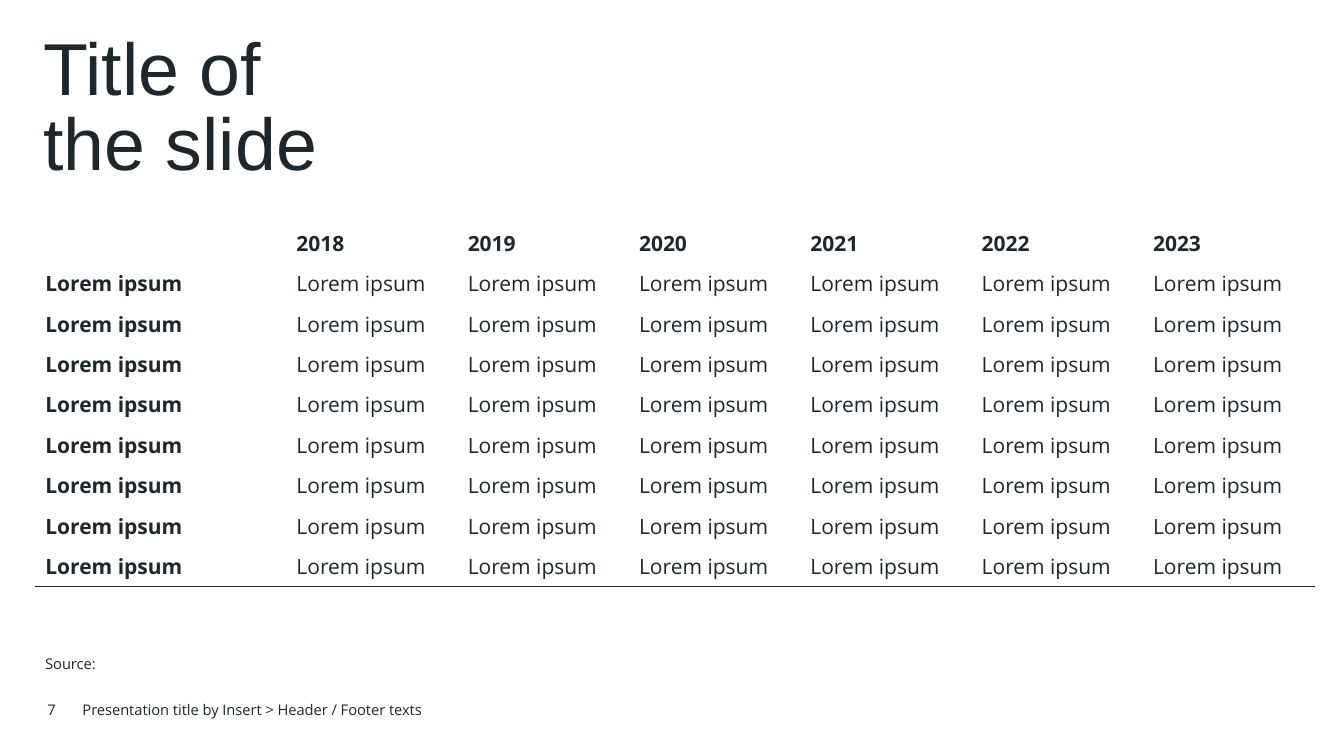
import dataclasses

import lxml.etree
import pptx
import pptx.dml.color
import pptx.enum.text
import pptx.oxml.ns
import pptx.util


@dataclasses.dataclass(frozen=True)
class Theme:
    ink: str = "1E272C"
    paper: str = "FFFFFF"
    title_font: str = "Arial"
    body_font: str = "Open Sans"
    title_size: float = 52.5
    table_size: float = 15
    small_size: float = 10.5
    rule_width: float = 1


def write_text(frame, text, font, size, color, bold=False, spacing=None, align="LEFT", anchor="TOP"):
    frame.word_wrap = True
    frame.vertical_anchor = pptx.enum.text.MSO_ANCHOR[anchor]
    paragraph = frame.paragraphs[0]
    paragraph.text = text
    paragraph.alignment = pptx.enum.text.PP_ALIGN[align]
    if spacing:
        paragraph.line_spacing = spacing
    for run in paragraph.runs:
        run.font.name = font
        run.font.size = pptx.util.Pt(size)
        run.font.bold = bold
        run.font.color.rgb = pptx.dml.color.RGBColor.from_string(color)


class SlideBuilder:
    """Places styled elements on one slide, with lengths in percent of its size."""

    def __init__(self, presentation, theme):
        self.presentation = presentation
        self.theme = theme
        self.slide = presentation.slides.add_slide(presentation.slide_layouts.get_by_name("Title Only"))
        self.slide.background.fill.solid()
        self.slide.background.fill.fore_color.rgb = pptx.dml.color.RGBColor.from_string(theme.paper)

    def across(self, share):
        return round(self.presentation.slide_width * share / 100)

    def down(self, share):
        return round(self.presentation.slide_height * share / 100)

    def area(self, left, top, width, height):
        return self.across(left), self.down(top), self.across(width), self.down(height)

    def title(self, text, *area):
        shape = self.slide.shapes.title
        shape.left, shape.top, shape.width, shape.height = self.area(*area)
        shape.text_frame.auto_size = pptx.enum.text.MSO_AUTO_SIZE.NONE
        write_text(shape.text_frame, text, self.theme.title_font, self.theme.title_size,
                   self.theme.ink, spacing=0.85)

    def small_text(self, text, *area, **text_format):
        shape = self.slide.shapes.add_textbox(*self.area(*area))
        write_text(shape.text_frame, text, self.theme.body_font, self.theme.small_size,
                   self.theme.ink, **text_format)

    def rule_below(self, cell):
        properties = cell._tc.get_or_add_tcPr()
        qualified = pptx.oxml.ns.qn
        line = lxml.etree.Element(qualified("a:lnB"), w=str(pptx.util.Pt(self.theme.rule_width)))
        fill = lxml.etree.SubElement(line, qualified("a:solidFill"))
        lxml.etree.SubElement(fill, qualified("a:srgbClr"), val=self.theme.ink)
        properties.insert(0, line)

    def table(self, rows, left, top, column_widths, row_height):
        area = self.area(left, top, sum(column_widths), row_height * len(rows))
        table = self.slide.shapes.add_table(len(rows), len(column_widths), *area).table
        table.horz_banding = False
        for column, width in zip(table.columns, column_widths):
            column.width = self.across(width)
        for row_index, values in enumerate(rows):
            table.rows[row_index].height = self.down(row_height)
            for column_index, value in enumerate(values):
                cell = table.cell(row_index, column_index)
                cell.fill.background()
                cell.margin_top = cell.margin_bottom = 0
                cell.vertical_anchor = pptx.enum.text.MSO_ANCHOR.MIDDLE
                write_text(cell.text_frame, value, self.theme.body_font, self.theme.table_size,
                           self.theme.ink, bold=row_index == 0 or column_index == 0, anchor="MIDDLE")
                self.rule_below(cell)


def main():
    presentation = pptx.Presentation()
    presentation.slide_width = pptx.util.Inches(13.33)
    presentation.slide_height = pptx.util.Inches(7.5)
    builder = SlideBuilder(presentation, Theme())

    years = [str(year) for year in range(2018, 2024)]
    header = ["", *years]
    body = [["Lorem ipsum"] * len(header)] * 8

    builder.title("Title of\vthe slide", 2.48, 4, 95.12, 20.4)
    builder.table([header, *body], 2.63, 29.47, [18.68] + [12.75] * len(years), 5.35)
    builder.small_text("Source:", 2.63, 85.47, 94.82, 3.73, spacing=1.2)
    builder.small_text("Presentation title by Insert > Header / Footer texts",
                       5.4, 91.2, 81.85, 5.33, anchor="MIDDLE")
    builder.small_text("7", 0, 91.2, 4.88, 5.33, align="RIGHT", anchor="MIDDLE")
    presentation.save("out.pptx")


if __name__ == "__main__":
    main()
